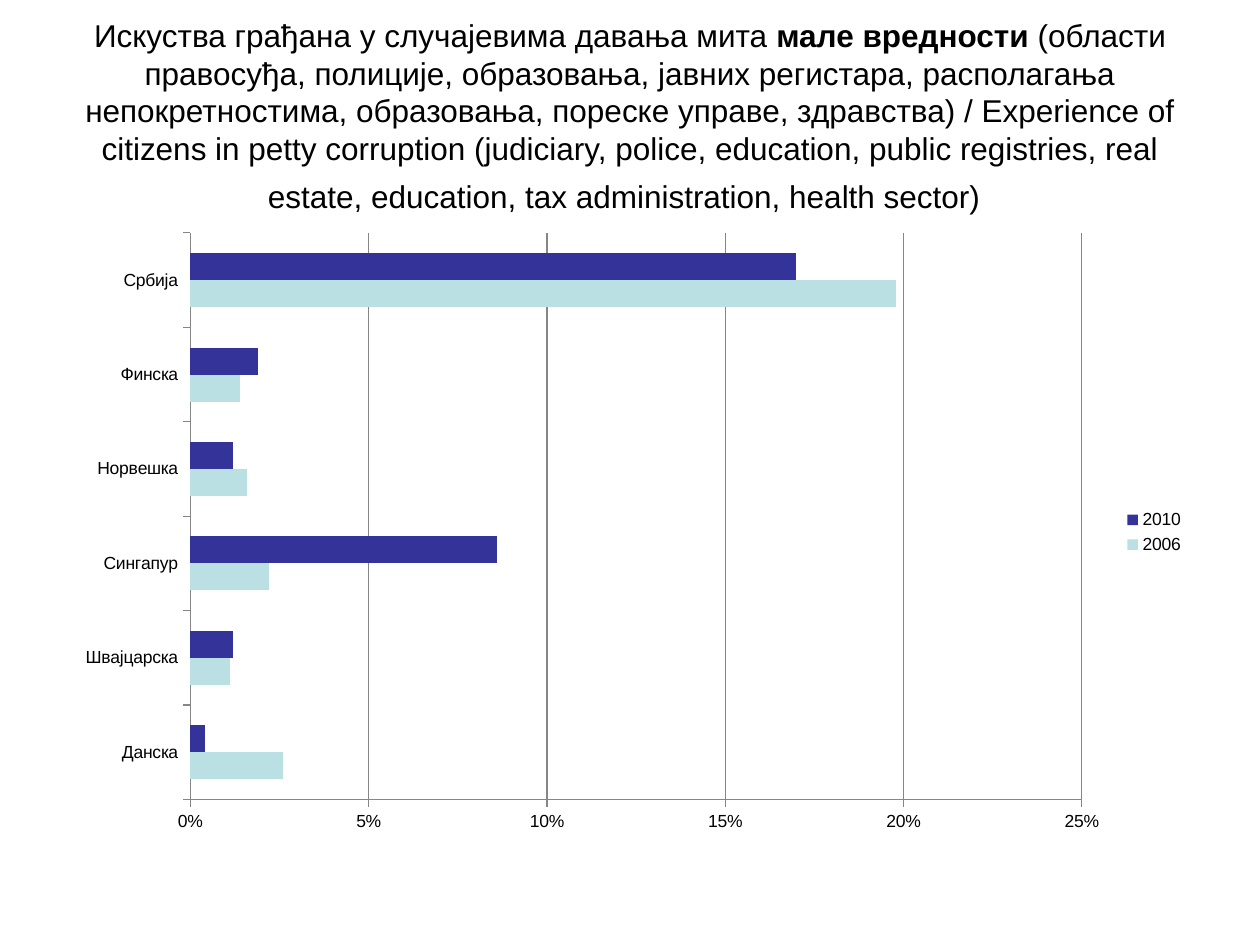
import dataclasses

import pptx
import pptx.chart.data
import pptx.dml.color
import pptx.enum.chart
import pptx.enum.text
import pptx.util
from pptx.util import Inches


@dataclasses.dataclass(frozen=True)
class Theme:
    """Colours, font and type sizes of the slide."""
    font: str = "Arial"
    text: str = "000000"
    grid: str = "868686"
    year_2006: str = "BBE0E3"
    year_2010: str = "333399"
    title_size: int = 18
    title_end_size: int = 24
    chart_size: int = 10


THEME = Theme()
TITLE_RUNS = [
    ("Искуства грађана у случајевима давања мита ", THEME.title_size, False),
    ("мале вредности ", THEME.title_size, True),
    ("(области правосуђа, полиције, образовања, јавних регистара, располагања "
     "непокретностима, образовања, пореске управе, здравства) / Experience of "
     "citizens in petty corruption (judiciary, police, education, public registries, "
     "real estate, education, tax administration, health sector)", THEME.title_size, False),
    (" ", THEME.title_end_size, False),
]
COUNTRIES = ["Данска", "Швајцарска", "Сингапур", "Норвешка", "Финска", "Србија"]
BRIBERY_RATES = [
    ("2006", [0.026, 0.011, 0.022, 0.016, 0.014, 0.198], THEME.year_2006),
    ("2010", [0.004, 0.012, 0.086, 0.012, 0.019, 0.17], THEME.year_2010),
]


def rgb(value):
    """Return the colour for a hexadecimal string."""
    return pptx.dml.color.RGBColor.from_string(value)


def style_font(font, size, bold=False):
    """Apply the theme font at a given size."""
    font.name = THEME.font
    font.size = pptx.util.Pt(size)
    font.bold = bold
    font.color.rgb = rgb(THEME.text)


def style_line(line):
    """Apply the thin grey line of axes and gridlines."""
    line.color.rgb = rgb(THEME.grid)
    line.width = pptx.util.Pt(0.75)


def add_title(slide):
    """Add the centred title with its emphasised words."""
    shape = slide.shapes.add_textbox(Inches(0.5), Inches(0.3), Inches(9), Inches(1.25))
    text_frame = shape.text_frame
    text_frame.word_wrap = True
    text_frame.vertical_anchor = pptx.enum.text.MSO_ANCHOR.MIDDLE
    paragraph = text_frame.paragraphs[0]
    paragraph.alignment = pptx.enum.text.PP_ALIGN.CENTER
    for text, size, bold in TITLE_RUNS:
        run = paragraph.add_run()
        run.text = text
        style_font(run.font, size, bold)


def style_axes(chart):
    """Format both axes and the vertical gridlines."""
    for axis in (chart.category_axis, chart.value_axis):
        axis.major_tick_mark = pptx.enum.chart.XL_TICK_MARK.OUTSIDE
        axis.minor_tick_mark = pptx.enum.chart.XL_TICK_MARK.NONE
        style_line(axis.format.line)
    value_axis = chart.value_axis
    value_axis.minimum_scale = 0
    value_axis.maximum_scale = 0.25
    value_axis.major_unit = 0.05
    value_axis.has_major_gridlines = True
    style_line(value_axis.major_gridlines.format.line)
    value_axis.tick_labels.number_format = "0%"
    value_axis.tick_labels.number_format_is_linked = False


def add_bribery_chart(slide):
    """Add the clustered bars of bribery rates by country and year."""
    chart_data = pptx.chart.data.CategoryChartData(number_format="0.0%")
    chart_data.categories = COUNTRIES
    for year, rates, _ in BRIBERY_RATES:
        chart_data.add_series(year, rates)
    chart = slide.shapes.add_chart(
        pptx.enum.chart.XL_CHART_TYPE.BAR_CLUSTERED,
        Inches(0.5), Inches(1.75), Inches(9), Inches(4.95), chart_data).chart
    style_font(chart.font, THEME.chart_size)
    chart.has_title = False
    chart.has_legend = True
    chart.legend.position = pptx.enum.chart.XL_LEGEND_POSITION.RIGHT
    chart.legend.include_in_layout = False
    style_axes(chart)
    plot = chart.plots[0]
    plot.gap_width = 150
    plot.vary_by_categories = False
    for series, (_, _, color) in zip(plot.series, BRIBERY_RATES):
        series.format.fill.solid()
        series.format.fill.fore_color.rgb = rgb(color)


def main():
    """Build and save the slide."""
    presentation = pptx.Presentation()
    presentation.slide_width = Inches(10)
    presentation.slide_height = Inches(7.5)
    slide = presentation.slides.add_slide(presentation.slide_layouts[6])
    add_title(slide)
    add_bribery_chart(slide)
    presentation.save("out.pptx")


if __name__ == "__main__":
    main()
